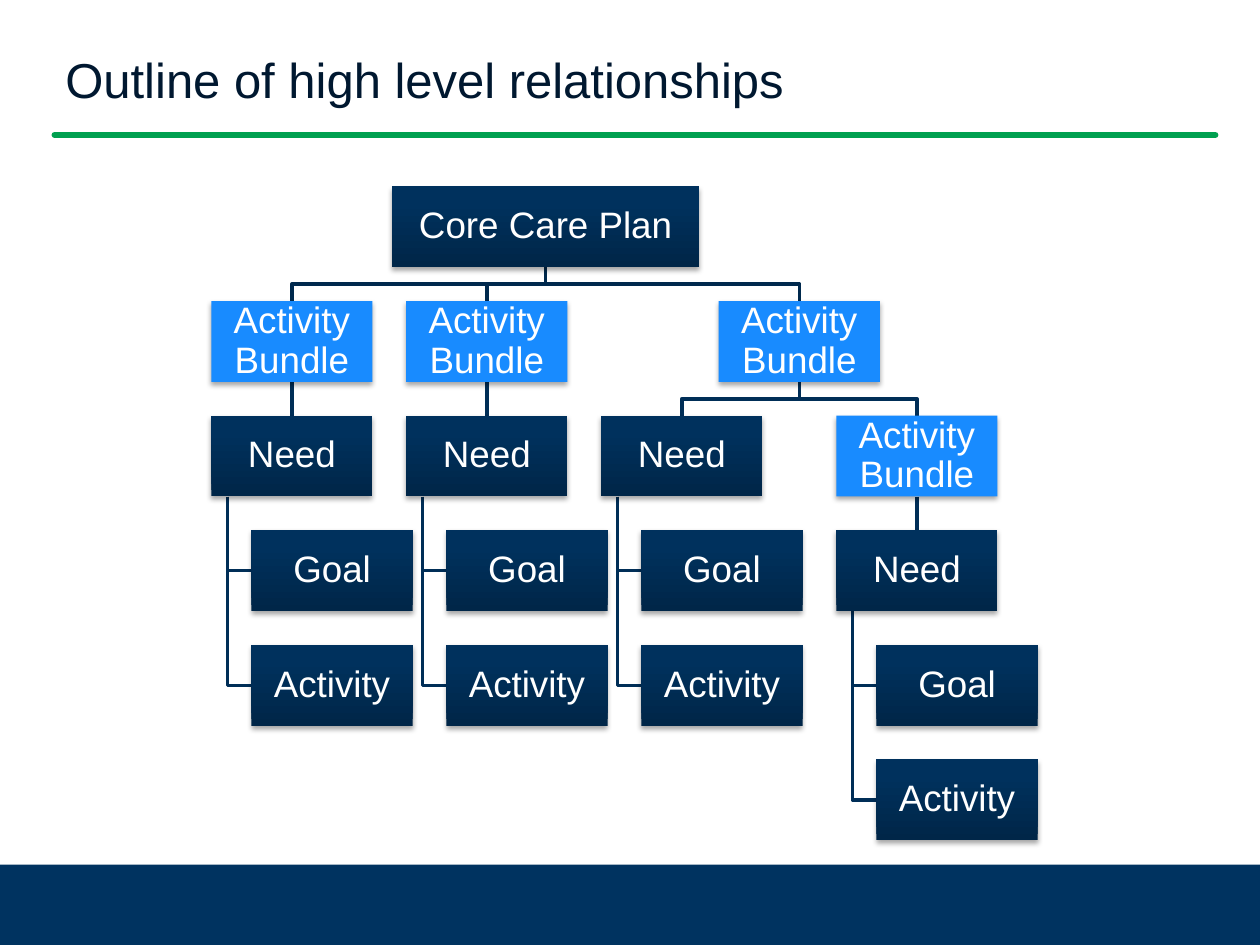
"""Build a slide with a care plan hierarchy, laid out from a nested tree."""
from copy import deepcopy

from lxml.etree import SubElement
from pptx import Presentation
from pptx.dml.color import RGBColor
from pptx.enum.shapes import MSO_CONNECTOR, MSO_SHAPE
from pptx.enum.text import MSO_ANCHOR, PP_ALIGN
from pptx.oxml.ns import qn
from pptx.util import Cm, Pt

TITLE = "Outline of high level relationships"
BUNDLE = "Activity Bundle"
NEED = ("Need", [("Goal", []), ("Activity", [])])
TREE = ("Core Care Plan", [
    (BUNDLE, [NEED]),
    (BUNDLE, [NEED]),
    (BUNDLE, [NEED, (BUNDLE, [NEED])]),
])

THEME = {
    "font": "Arial", "title_size": Pt(28), "box_size": Pt(21),
    "title": "001830", "text": "FFFFFF", "footer": "003360", "rule": "00A050",
    "bundle": "188BFF", "box": [(0, "002648"), (0.8, "00315D"), (1, "00325D")],
    "top_link": "00294D", "link": "002E57",
    "link_width": Pt(2), "rule_width": Pt(3.5),
}
SHADOW = {"blurRad": Pt(3.1), "dist": Pt(1.8), "dir": 5400000, "rotWithShape": 0}
BOX_FRAME = {
    "word_wrap": True, "vertical_anchor": MSO_ANCHOR.MIDDLE,
    "margin_left": Cm(0.03), "margin_right": Cm(0.03),
    "margin_top": Cm(0.03), "margin_bottom": Cm(0.03),
}
BOX_PARA = {"alignment": PP_ALIGN.CENTER, "line_spacing": 0.9}
TITLE_FRAME = {"word_wrap": True, "margin_top": Cm(0.25)}

LEFT, TOP = 4.26, 3.76
BOX_W, BOX_H, ROOT_W = 3.25, 1.63, 6.2
ROW, GAP, INDENT = 2.31, 0.68, 0.81
TRUNK = BOX_W / 10


def apply(obj, fmt):
    for name, value in fmt.items():
        setattr(obj, name, value)


def write(tf, text, frame, para, size, color):
    apply(tf, frame)
    p = tf.paragraphs[0]
    apply(p, para)
    r = p.add_run()
    r.text = text
    apply(r.font, {"name": THEME["font"], "size": size})
    r.font.color.rgb = RGBColor.from_string(color)


def stroke(line, color, width):
    line.color.rgb = RGBColor.from_string(color)
    line.width = width


def place(node, row, edges, boxes, links):
    """Place a subtree clear of earlier boxes and return the centre of its root."""
    text, kids = node
    hangs = text == "Need"
    y = TOP + row * ROW
    if kids and not hangs:
        centres = [place(kid, row + 1, edges, boxes, links) for kid in kids]
        mid = (centres[0] + centres[-1]) / 2
        bottom, bend = y + BOX_H, y + (BOX_H + ROW) / 2
        color = THEME["link" if row else "top_link"]
        for c in centres:
            links.append(([(mid, bottom), (mid, bend), (c, bend), (c, y + ROW)], color))
        width = BOX_W if row else ROOT_W
        x = mid - width / 2
    else:
        width = BOX_W
        x = max([LEFT, edges.get(row, 0) + GAP] + [
            edges.get(row + i, 0) + GAP - INDENT for i in range(1, len(kids) + 1)])
        mid = x + width / 2
        for i, (label, _) in enumerate(kids, 1):
            kid_x, kid_y = x + INDENT, y + i * ROW
            centre_y = kid_y + BOX_H / 2
            trunk_x = x + TRUNK
            links.append(([(trunk_x, y + BOX_H), (trunk_x, centre_y),
                           (kid_x, centre_y)], THEME["link"]))
            boxes.append((label, kid_x, kid_y, BOX_W))
            edges[row + i] = kid_x + BOX_W
    edges[row] = x + width
    boxes.append((text, x, y, width))
    return mid


def add_line(s, start, end, color, width):
    sp = s.shapes.add_connector(MSO_CONNECTOR.STRAIGHT, *map(Cm, start + end))
    stroke(sp.line, color, width)
    SubElement(sp._element.spPr, qn("a:effectLst"))
    return sp


def add_link(s, points, color):
    if points[0][0] == points[-1][0]:
        add_line(s, points[0], points[-1], color, THEME["link_width"])
        return
    pts = [(Cm(x), Cm(y)) for x, y in points]
    builder = s.shapes.build_freeform(*pts[0])
    builder.add_line_segments(pts[1:], close=False)
    sp = builder.convert_to_shape()
    sp.fill.background()
    stroke(sp.line, color, THEME["link_width"])
    sp.shadow.inherit = False


def add_rect(s, x, y, w, h):
    sp = s.shapes.add_shape(MSO_SHAPE.RECTANGLE, Cm(x), Cm(y), Cm(w), Cm(h))
    sp.line.fill.background()
    sp.shadow.inherit = False
    return sp


def fill_solid(sp, color):
    sp.fill.solid()
    sp.fill.fore_color.rgb = RGBColor.from_string(color)


def fill_gradient(sp, stops):
    sp.fill.gradient()
    sp.fill.gradient_angle = 90
    gs_lst = next(sp._element.spPr.iter(qn("a:gsLst")))
    gs_lst.append(deepcopy(gs_lst[-1]))
    for stop, (position, color) in zip(sp.fill.gradient_stops, stops):
        stop.position = position
        stop.color.rgb = RGBColor.from_string(color)


def add_box(s, text, x, y, w):
    sp = add_rect(s, x, y, w, BOX_H)
    if text == BUNDLE:
        fill_solid(sp, THEME["bundle"])
    else:
        fill_gradient(sp, THEME["box"])
    effects = sp._element.spPr.find(qn("a:effectLst"))
    shadow = SubElement(effects, qn("a:outerShdw"),
                        {k: str(int(v)) for k, v in SHADOW.items()})
    color = SubElement(shadow, qn("a:srgbClr"), val="000000")
    SubElement(color, qn("a:alpha"), val="35000")
    write(sp.text_frame, text, BOX_FRAME, BOX_PARA, THEME["box_size"], THEME["text"])


def main():
    prs = Presentation()
    apply(prs, {"slide_width": Cm(25.4), "slide_height": Cm(19.05)})
    s = prs.slides.add_slide(prs.slide_layouts[6])
    fill_solid(add_rect(s, 0, 17.43, 25.4, 1.7), THEME["footer"])
    rule = add_line(s, (1.1, 2.72), (24.5, 2.72), THEME["rule"], THEME["rule_width"])
    rule.line._get_or_add_ln().set("cap", "rnd")

    boxes, links = [], []
    place(TREE, 0, {}, boxes, links)
    for points, color in links:
        add_link(s, points, color)
    for box in boxes:
        add_box(s, *box)

    tb = s.shapes.add_textbox(Cm(1.07), Cm(0.74), Cm(23.04), Cm(2.26))
    write(tb.text_frame, TITLE, TITLE_FRAME, {}, THEME["title_size"], THEME["title"])
    prs.save("out.pptx")


if __name__ == "__main__":
    main()
